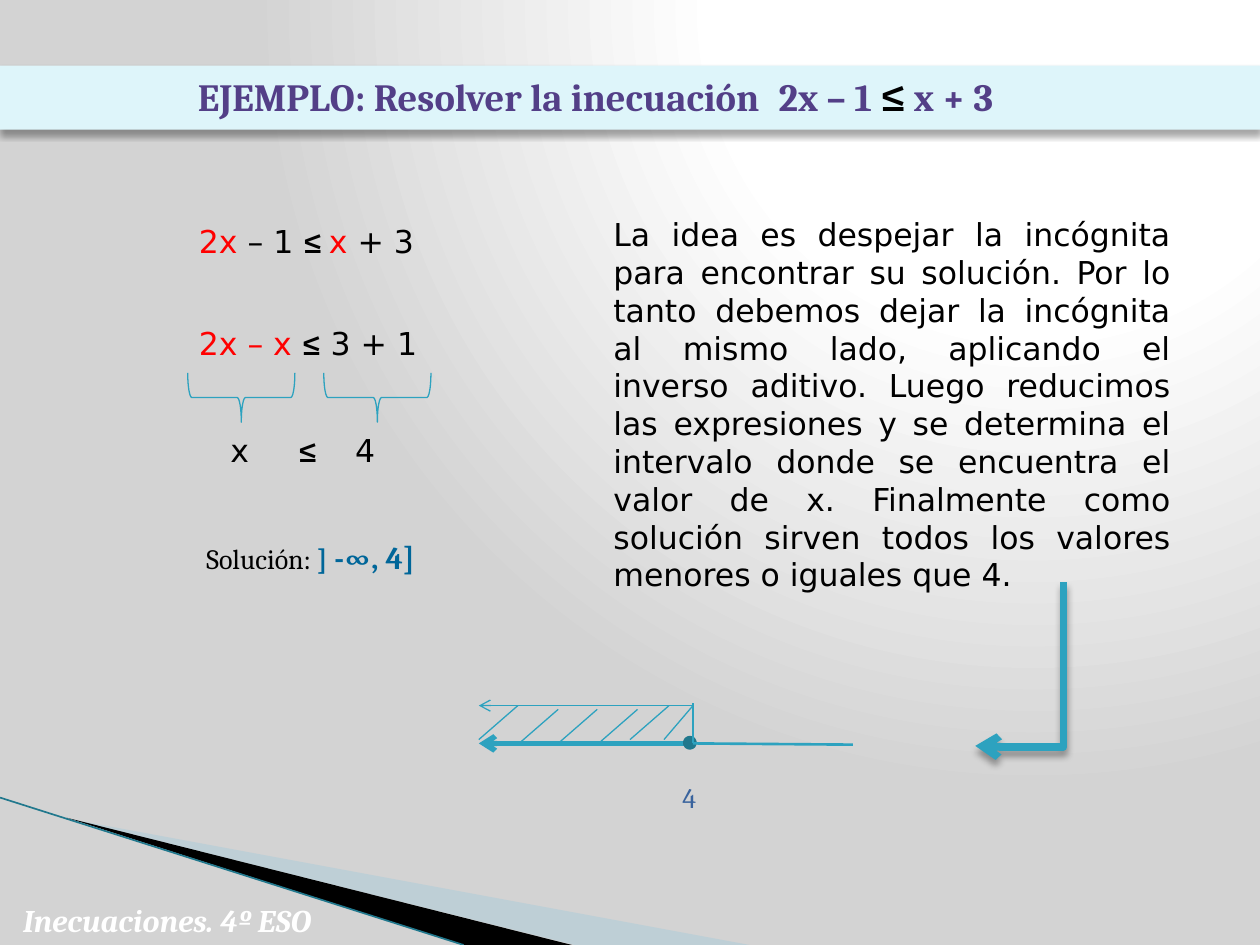
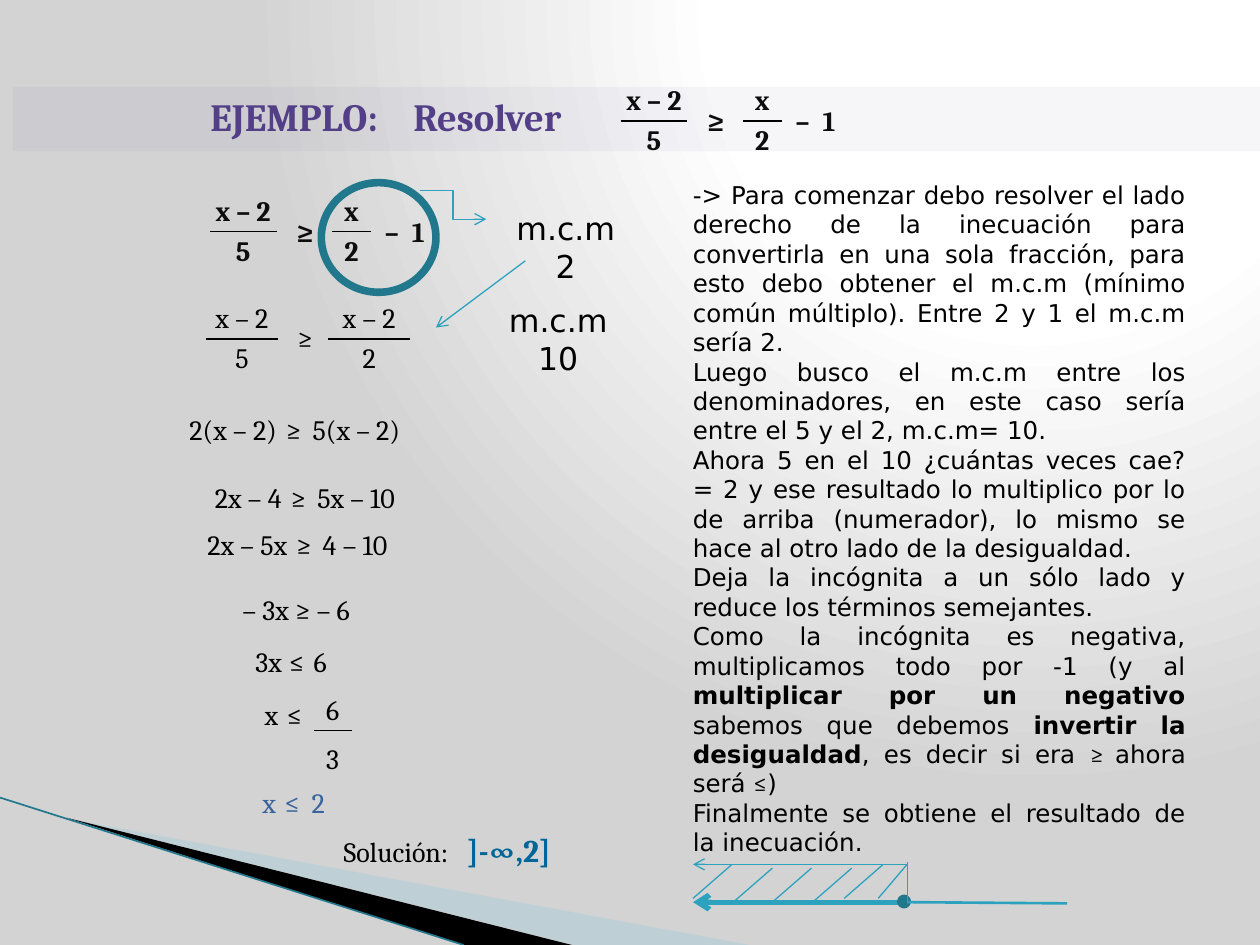
from dataclasses import dataclass

from lxml.etree import SubElement
from pptx import Presentation
from pptx.dml.color import RGBColor
from pptx.enum.shapes import MSO_CONNECTOR, MSO_SHAPE
from pptx.enum.text import MSO_ANCHOR, MSO_AUTO_SIZE, PP_ALIGN
from pptx.oxml import parse_xml
from pptx.oxml.ns import nsdecls, qn
from pptx.util import Inches, Pt


@dataclass(frozen=True)
class Theme:
    serif: str = "Cambria"
    sans: str = "DejaVu Sans"
    black: str = "000000"
    ink: str = "0D0D0D"
    white: str = "FFFFFF"
    grey: str = "D3D3D3"
    red: str = "FF0000"
    purple: str = "533F87"
    pale: str = "DEF5FA"
    teal: str = "2DA2BF"
    dark_teal: str = "21788D"
    mist: str = "A0CBDC"
    blue: str = "006699"
    result: str = "39639D"
    title: int = 22
    large: int = 18
    math: int = 16
    small: int = 14
    thin: float = 0.75
    thick: float = 4.33


T = Theme()
WIDTH, HEIGHT = 10, 7.5
BAND_HEIGHT = 0.51
LINE_HEIGHT = 0.37

# Content: a run is a string or (string, changes to the base style)
RED = dict(color=T.red)
SERIF_BOLD = dict(font=T.serif, bold=True)
SERIF = dict(font=T.serif)
BOLD = dict(bold=True)
ANSWER = dict(color=T.blue, bold=True, size=T.large)

FOOTER = "Inecuaciones. 4º ESO"
TITLE_1 = ["EJEMPLO: Resolver la inecuación\t2x – 1 ",
           ("≤", dict(size=24, color=T.black)), " x + 3"]
TITLE_2 = ["EJEMPLO:\tResolver"]

# left, top, runs, tab stops
STEPS_1 = [
    (1.48, 1.71, [("2x", RED), " – 1 ", ("≤ ", SERIF_BOLD), ("x", RED), " + 3"], ()),
    (1.48, 2.52, [("2x – x ", RED), ("≤", SERIF_BOLD), " 3 + 1"], ()),
    (1.73, 3.37, ["x\t", ("≤", SERIF_BOLD), "\t4"], (0.54, 0.99)),
]
SOLUTION_1 = ["Solución: ", ("]", dict(ANSWER, size=T.math)), (" -∞, 4]", ANSWER)]
SOLUTION_2 = ["Solución:\t", ("]-∞,2]", ANSWER)]
IDEA = [["La idea es despejar la incógnita para encontrar su solución. Por lo tanto "
         "debemos dejar la incógnita al mismo lado, aplicando el inverso aditivo. Luego "
         "reducimos las expresiones y se determina el intervalo donde se encuentra el "
         "valor de x. Finalmente como solución sirven todos los valores menores o "
         "iguales que 4."]]
EXPLANATION = [
    ["-> Para comenzar debo resolver el lado derecho de la inecuación para convertirla "
     "en una sola fracción, para esto debo obtener el m.c.m (mínimo común múltiplo). "
     "Entre 2 y 1 el m.c.m sería 2."],
    ["Luego busco el m.c.m entre los denominadores, en este caso sería entre el 5 y "
     "el 2, m.c.m= 10."],
    ["Ahora 5 en el 10 ¿cuántas veces cae? = 2 y ese resultado lo multiplico por lo de "
     "arriba (numerador), lo mismo se hace al otro lado de la desigualdad."],
    ["Deja la incógnita a un sólo lado y reduce los términos semejantes."],
    ["Como la incógnita es negativa, multiplicamos todo por -1 (y al ",
     ("multiplicar por un negativo ", BOLD), "sabemos que debemos ",
     ("invertir la desigualdad", BOLD), ", es decir si era ", ("≥ ", SERIF),
     "ahora será ", ("≤", SERIF), ")"],
    ["Finalmente se obtiene el resultado de la inecuación."],
]

# left side, operator, right side, centre x, centre y, colour, operator tracking
STEPS_2 = [
    ("2(x – 2)", " ≥ ", "5(x – 2)", 2.34, 3.41, T.black, 1.5),
    ("2x – 4", " ≥ ", "5x – 10", 2.42, 3.95, T.black, 1.5),
    ("2x – 5x", " ≥ ", "4 – 10", 2.36, 4.32, T.black, 1.5),
    ("– 3x", " ≥ ", "– 6", 2.35, 4.84, T.black, 0),
    ("3x", " ≤ ", "6", 2.31, 5.25, T.black, 0.75),
    ("x", " ≤", "", 2.25, 5.67, T.black, 1.5),
    ("x", " ≤ ", "2", 2.33, 6.37, T.result, 1.5),
]
MULTIPLES = [("2", 4.49, 1.61), ("10", 4.43, 2.34)]


def rgb(value):
    return RGBColor.from_string(value)


def write(p, runs, font=T.serif, size=T.math, color=T.black, bold=False,
          italic=False, tabs=()):
    if tabs:
        tab_list = SubElement(p._p.get_or_add_pPr(), qn("a:tabLst"))
        for pos in tabs:
            SubElement(tab_list, qn("a:tab"), pos=str(Inches(pos)), algn="l")
    base = dict(font=font, size=size, color=color, bold=bold, italic=italic, track=0)
    for run in runs:
        text, changes = (run, {}) if isinstance(run, str) else run
        style = {**base, **changes}
        r = p.add_run()
        r.text = text
        r.font.name, r.font.size = style["font"], Pt(style["size"])
        r.font.bold, r.font.italic = style["bold"], style["italic"]
        r.font.color.rgb = rgb(style["color"])
        if style["track"]:
            r._r.get_or_add_rPr().set("spc", str(int(style["track"] * 100)))


def add_text(s, paragraphs, x, y, w, h, align=PP_ALIGN.LEFT,
             anchor=MSO_ANCHOR.TOP, **style):
    tf = s.shapes.add_textbox(*map(Inches, (x, y, w, h))).text_frame
    tf.word_wrap, tf.vertical_anchor = True, anchor
    for i, runs in enumerate(paragraphs):
        p = tf.add_paragraph() if i else tf.paragraphs[0]
        p.alignment = align
        write(p, runs, **style)


def add_math(s, runs, cx, cy, w=0.8, **style):
    """Write one line of mathematics centred on a point."""
    add_text(s, [runs], cx - w / 2, cy - LINE_HEIGHT / 2, w, LINE_HEIGHT,
             PP_ALIGN.CENTER, **style)


def set_alpha(fill, percent):
    color = fill._xPr.find(qn("a:solidFill"))[0]
    SubElement(color, qn("a:alpha"), val=str(percent * 1000))


def set_effects(sp, shadow=False):
    """Replace inherited effects with nothing, or with a soft shadow below."""
    effects = SubElement(sp._element.spPr, qn("a:effectLst"))
    if shadow:
        outer = SubElement(effects, qn("a:outerShdw"), blurRad=str(Pt(4)),
                           dist=str(Pt(3)), dir="5400000", rotWithShape="0")
        color = SubElement(outer, qn("a:srgbClr"), val=T.black)
        SubElement(color, qn("a:alpha"), val="35000")


def add_line(s, x1, y1, x2, y2, color=T.teal, width=T.thin, arrow=False,
             kind=MSO_CONNECTOR.STRAIGHT, shadow=False):
    c = s.shapes.add_connector(kind, *map(Inches, (x1, y1, x2, y2)))
    c.line.color.rgb, c.line.width = rgb(color), Pt(width)
    if arrow:
        SubElement(c.line._get_or_add_ln(), qn("a:tailEnd"), type="arrow")
    set_effects(c, shadow)
    return c


def add_outline(s, preset, x, y, w, h, color, width, fill=None):
    sp = s.shapes.add_shape(preset, *map(Inches, (x, y, w, h)))
    sp.shadow.inherit = False
    if fill:
        sp.fill.solid()
        sp.fill.fore_color.rgb = rgb(fill)
    else:
        sp.fill.background()
    sp.line.color.rgb, sp.line.width = rgb(color), Pt(width)
    return sp


def add_wedge(s, points, color, alpha=100):
    points = [(Inches(x), Inches(y)) for x, y in points]
    builder = s.shapes.build_freeform(*points[0])
    builder.add_line_segments(points[1:])
    sp = builder.convert_to_shape()
    sp.shadow.inherit = False
    sp.fill.solid()
    sp.fill.fore_color.rgb = rgb(color)
    set_alpha(sp.fill, alpha)
    sp.line.fill.background()
    return sp


def decorate_master(prs, s):
    """Give the master its background and corner, drawn on s and moved over."""
    master = prs.slide_master
    master.background.fill.solid()
    stops = "".join(f'<a:gs pos="{pos}000"><a:srgbClr val="{color}"/></a:gs>'
                    for pos, color in ((0, T.white), (40, T.white), (100, T.grey)))
    gradient = parse_xml(
        f'<a:gradFill {nsdecls("a")} rotWithShape="1"><a:gsLst>{stops}</a:gsLst>'
        '<a:path path="circle"><a:fillToRect l="65000" t="0" r="0" b="98000"/>'
        '</a:path></a:gradFill>')
    solid = master._element.cSld.find(".//" + qn("a:solidFill"))
    solid.getparent().replace(solid, gradient)
    corner = [
        add_wedge(s, [(0.55, 6.5), (5.95, HEIGHT), (4.56, HEIGHT)], T.mist, 40),
        add_wedge(s, [(0.53, 6.49), (4.54, HEIGHT), (3.68, HEIGHT)], T.black),
        add_line(s, 0, 6.33, 3.68, HEIGHT, T.dark_teal, 0.95),
    ]
    for i, sp in enumerate(corner):
        master.shapes._spTree.insert(2 + i, sp._element)


def set_title(s, runs, x, y, tab, fill, alpha=100, shadow=False):
    sp = s.shapes.title
    sp.left, sp.top = Inches(x), Inches(y)
    sp.width, sp.height = Inches(WIDTH - x), Inches(BAND_HEIGHT)
    sp.fill.solid()
    sp.fill.fore_color.rgb = rgb(fill)
    set_alpha(sp.fill, alpha)
    set_effects(sp, shadow)
    tf = sp.text_frame
    tf.auto_size, tf.vertical_anchor = MSO_AUTO_SIZE.NONE, MSO_ANCHOR.MIDDLE
    p = tf.paragraphs[0]
    p.alignment, p.line_spacing = PP_ALIGN.LEFT, 0.9
    pPr = p._p.get_or_add_pPr()
    pPr.set("marL", str(Inches(1.08)))
    pPr.set("indent", str(Inches(0.39)))
    write(p, runs, size=T.title, color=T.purple, bold=True, tabs=(tab,))


def add_fraction(s, top, bottom, cx, y, bar, drop=0.15, **style):
    add_math(s, [top], cx, y - 0.17, **style)
    add_math(s, [bottom], cx, y + drop, **style)
    add_line(s, cx - bar / 2, y, cx + bar / 2, y, T.black)


def add_inequality(s, x, y):
    """Write the inequality to solve, its first fraction bar starting at x, y."""
    style = dict(color=T.ink, bold=True)
    add_fraction(s, "x – 2", "5", x + 0.27, y, 0.53, **style)
    add_fraction(s, "x", "2", x + 1.13, y, 0.31, **style)
    for symbol, dx in (("≥", 0.76), ("–", 1.45), ("1", 1.66)):
        add_math(s, [symbol], x + dx, y, 0.4, **style)


def add_number_line(s, x, y):
    """Draw the ray that ends in a closed point, with the hatching over it."""
    ray, rise = 1.7, 0.3
    end = x + ray
    add_line(s, end, y, x, y, width=3, arrow=True)
    add_outline(s, MSO_SHAPE.OVAL, end - 0.05, y - 0.03, 0.05, 0.05,
                T.dark_teal, T.thick, T.teal)
    add_line(s, end, y, end + 1.27, y + 0.01, width=1.5)
    add_line(s, end, y, end, y - rise - 0.02)
    add_line(s, end, y - rise, x, y - rise, arrow=True)
    for dx, lift in ((0, 0.03), (0.32, 0), (0.63, 0), (0.95, 0), (1.2, 0.03), (1.47, 0.03)):
        run = min(0.31, ray - dx)
        add_line(s, x + dx, y - lift, x + dx + run, y - lift - 0.27)


def build_linear_example(s):
    set_title(s, TITLE_1, 0, 0.52, 6.14, T.pale, shadow=True)
    add_text(s, [[FOOTER]], 0, 7.1, 2.57, 0.4, PP_ALIGN.RIGHT, MSO_ANCHOR.BOTTOM,
             size=T.large, color=T.white, bold=True, italic=True)
    for x, y, runs, tabs in STEPS_1:
        add_text(s, [runs], x, y, 2.11, 0.4, font=T.sans, size=T.large, tabs=tabs)
    add_text(s, [SOLUTION_1], 1.54, 4.22, 2.05, 0.4)
    add_text(s, IDEA, 4.77, 1.66, 4.62, 3.13, PP_ALIGN.JUSTIFY,
             font=T.sans, size=T.large)
    for x in (1.72, 2.8):
        brace = add_outline(s, MSO_SHAPE.LEFT_BRACE, x, 2.73, 0.39, 0.85, T.teal, T.thin)
        brace.rotation = 270
    add_number_line(s, 3.8, 5.9)
    add_math(s, ["4"], 5.47, 6.33, 0.4, color=T.result)
    arrow = add_line(s, 7.44, 4.92, 8.74, 5.62, width=T.thick, arrow=True,
                     kind=MSO_CONNECTOR.ELBOW, shadow=True)
    spPr = arrow._element.spPr
    spPr.find(qn("a:xfrm")).set("rot", "5400000")
    guides = spPr.find(qn("a:prstGeom")).find(qn("a:avLst"))
    SubElement(guides, qn("a:gd"), name="adj1", fmla="val 100600")


def build_fraction_example(s):
    set_title(s, TITLE_2, 0.1, 0.69, 3.08, T.purple, alpha=5)
    add_inequality(s, 4.92, 0.96)
    add_inequality(s, 1.66, 1.84)
    add_fraction(s, "x – 2", "5", 1.92, 2.69, 0.57)
    add_math(s, ["≥"], 2.42, 2.68, 0.4)
    add_fraction(s, "x – 2", "2", 2.93, 2.69, 0.65)
    for left, sign, right, cx, cy, color, track in STEPS_2:
        runs = [left, (sign, dict(track=track))] + ([right] if right else [])
        add_math(s, runs, cx, cy, 2.07, color=color)
    add_fraction(s, "6", "3", 2.64, 5.8, 0.3, drop=0.22)
    add_text(s, [SOLUTION_2], 2.63, 6.55, 1.93, 0.4, tabs=(0.98,))
    add_text(s, EXPLANATION, 5.4, 1.38, 4.11, 5.52, PP_ALIGN.JUSTIFY,
             font=T.sans, size=T.small)
    for value, cx, y in MULTIPLES:
        add_text(s, [["m.c.m"], [value]], cx - 0.59, y, 1.18, 0.71, PP_ALIGN.CENTER,
                 font=T.sans, size=T.large)
    add_outline(s, MSO_SHAPE.OVAL, 2.55, 1.45, 0.91, 0.87, T.dark_teal, T.thick)
    add_line(s, 3.33, 1.51, 3.86, 1.74, arrow=True, kind=MSO_CONNECTOR.ELBOW)
    add_line(s, 4.17, 2.07, 3.46, 2.6, arrow=True)
    add_number_line(s, 5.5, 7.16)


def main():
    prs = Presentation()
    prs.slide_width, prs.slide_height = Inches(WIDTH), Inches(HEIGHT)
    title_only = prs.slide_layouts[5]
    for i, build in enumerate((build_linear_example, build_fraction_example)):
        s = prs.slides.add_slide(title_only)
        if i == 0:
            decorate_master(prs, s)
        build(s)
    prs.save("out.pptx")


if __name__ == "__main__":
    main()
